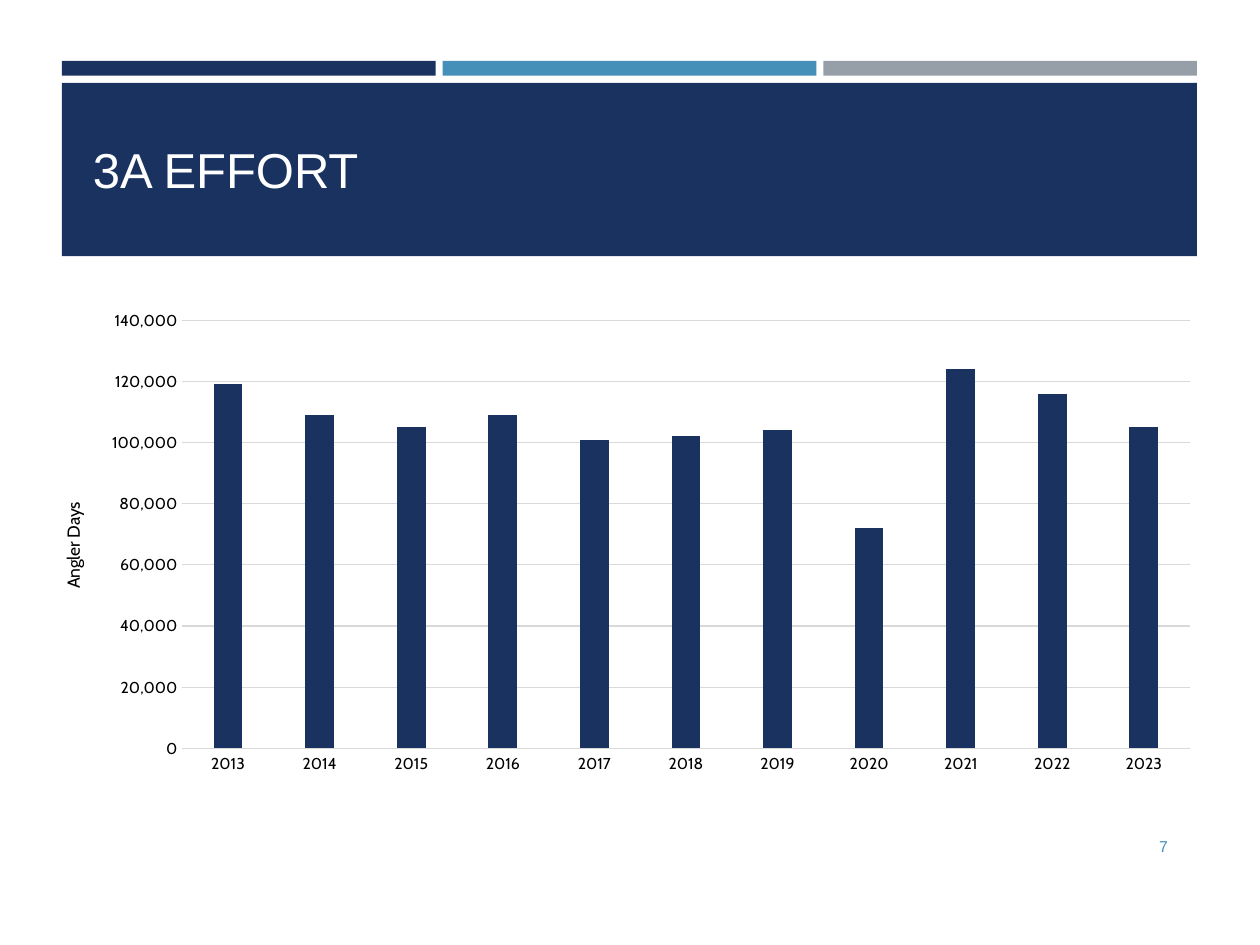
from pptx import Presentation
from pptx.chart.data import CategoryChartData as ChartData
from pptx.dml.color import RGBColor
from pptx.enum.chart import XL_CHART_TYPE as Kind, XL_TICK_MARK as Tick
from pptx.enum.shapes import MSO_SHAPE as Shape
from pptx.enum.text import MSO_ANCHOR as Anchor, PP_ALIGN as Align
from pptx.oxml import parse_xml
from pptx.oxml.ns import nsdecls, qn
from pptx.util import Pt

NAVY = RGBColor(0x1A, 0x32, 0x60)
BLUE = RGBColor(0x45, 0x90, 0xB8)
GRAY = RGBColor(0x96, 0x9F, 0xA7)
GRID = RGBColor(0xD9, 0xD9, 0xD9)
BLACK = RGBColor(0, 0, 0)
WHITE = RGBColor(0xFF, 0xFF, 0xFF)

LEFT, WIDTH, GAP = 35.4, 648.6, 4
YEARS = range(2013, 2024)
DAYS = [119000, 109000, 105000, 109000, 101000, 102000,
        104000, 72000, 124000, 116000, 105000]


def add_bar(slide, x, y, w, h, color):
    bar = slide.shapes.add_shape(Shape.RECTANGLE, Pt(x), Pt(y), Pt(w), Pt(h))
    bar.shadow.inherit = False
    bar.fill.solid()
    bar.fill.fore_color.rgb = color
    bar.line.fill.background()


def set_font(font, name, size, color):
    font.name = name
    font.size = Pt(size)
    font.color.rgb = color
    font.bold = False


def add_text(slide, x, y, w, h, text, size, color, align=Align.LEFT):
    box = slide.shapes.add_textbox(Pt(x), Pt(y), Pt(w), Pt(h))
    frame = box.text_frame
    frame.word_wrap = True
    frame.vertical_anchor = Anchor.MIDDLE
    par = frame.paragraphs[0]
    par.alignment = align
    run = par.add_run()
    run.text = text
    set_font(run.font, "Arial", size, color)


def place(parent, index, **parts):
    """Fix a chart part by fractions of the chart's size."""
    old = parent.find(qn("c:layout"))
    if old is not None:
        parent.remove(old)
    inner = '<c:layoutTarget val="inner"/>' if "w" in parts else ""
    modes = "".join(f'<c:{key}Mode val="edge"/>' for key in "xy")
    sizes = "".join(f'<c:{key} val="{val}"/>' for key, val in parts.items())
    parent.insert(index, parse_xml(
        f'<c:layout {nsdecls("c")}><c:manualLayout>'
        f"{inner}{modes}{sizes}</c:manualLayout></c:layout>"))


def style_axis(axis):
    axis.major_tick_mark = axis.minor_tick_mark = Tick.NONE
    set_font(axis.tick_labels.font, "Cabin", 9, BLACK)


def style_line(line):
    line.color.rgb = GRID
    line.width = Pt(0.75)


def add_chart(slide, x, y, w, h):
    data = ChartData(number_format="#,##0")
    data.categories = [str(year) for year in YEARS]
    data.add_series("Angler Days", DAYS)
    chart = slide.shapes.add_chart(
        Kind.COLUMN_CLUSTERED, Pt(x), Pt(y), Pt(w), Pt(h), data).chart
    chart.has_legend = chart.has_title = False
    set_font(chart.font, "Cabin", 10, BLACK)

    plot = chart.plots[0]
    plot.vary_by_categories = False
    plot.gap_width, plot.overlap = 219, -27
    fill = plot.series[0].format.fill
    fill.solid()
    fill.fore_color.rgb = NAVY

    cats, vals = chart.category_axis, chart.value_axis
    style_axis(cats)
    style_axis(vals)
    style_line(cats.format.line)
    style_line(vals.major_gridlines.format.line)
    vals.format.line.fill.background()
    vals.minimum_scale, vals.maximum_scale = 0, 140000
    vals.major_unit = 20000
    vals.tick_labels.number_format = "#,##0"
    vals.tick_labels.number_format_is_linked = False

    title = vals.axis_title
    run = title.text_frame.paragraphs[0].add_run()
    run.text = "Angler Days"
    set_font(run.font, "Cabin", 10, BLACK)
    place(title._element, 1, x=0.02, y=0.41)
    area = chart._chartSpace.find(".//" + qn("c:plotArea"))
    place(area, 0, x=0.126, y=0.04, w=0.855, h=0.887)


def main():
    deck = Presentation()
    deck.slide_width, deck.slide_height = Pt(720), Pt(540)
    slide = deck.slides.add_slide(deck.slide_layouts[6])
    width = (WIDTH - 2 * GAP) / 3
    for col, color in enumerate((NAVY, BLUE, GRAY)):
        add_bar(slide, LEFT + col * (width + GAP), 34.8, width, 8.4, color)
    add_bar(slide, LEFT, 47.4, WIDTH, 99, NAVY)
    add_text(slide, 46, 54, 629, 85, "3A EFFORT", 28, WHITE)
    add_text(slide, 614, 469, 60.5, 29, "7", 9, BLUE, Align.RIGHT)
    add_chart(slide, 19.4, 172, 673.2, 275.8)
    deck.save("out.pptx")


if __name__ == "__main__":
    main()
